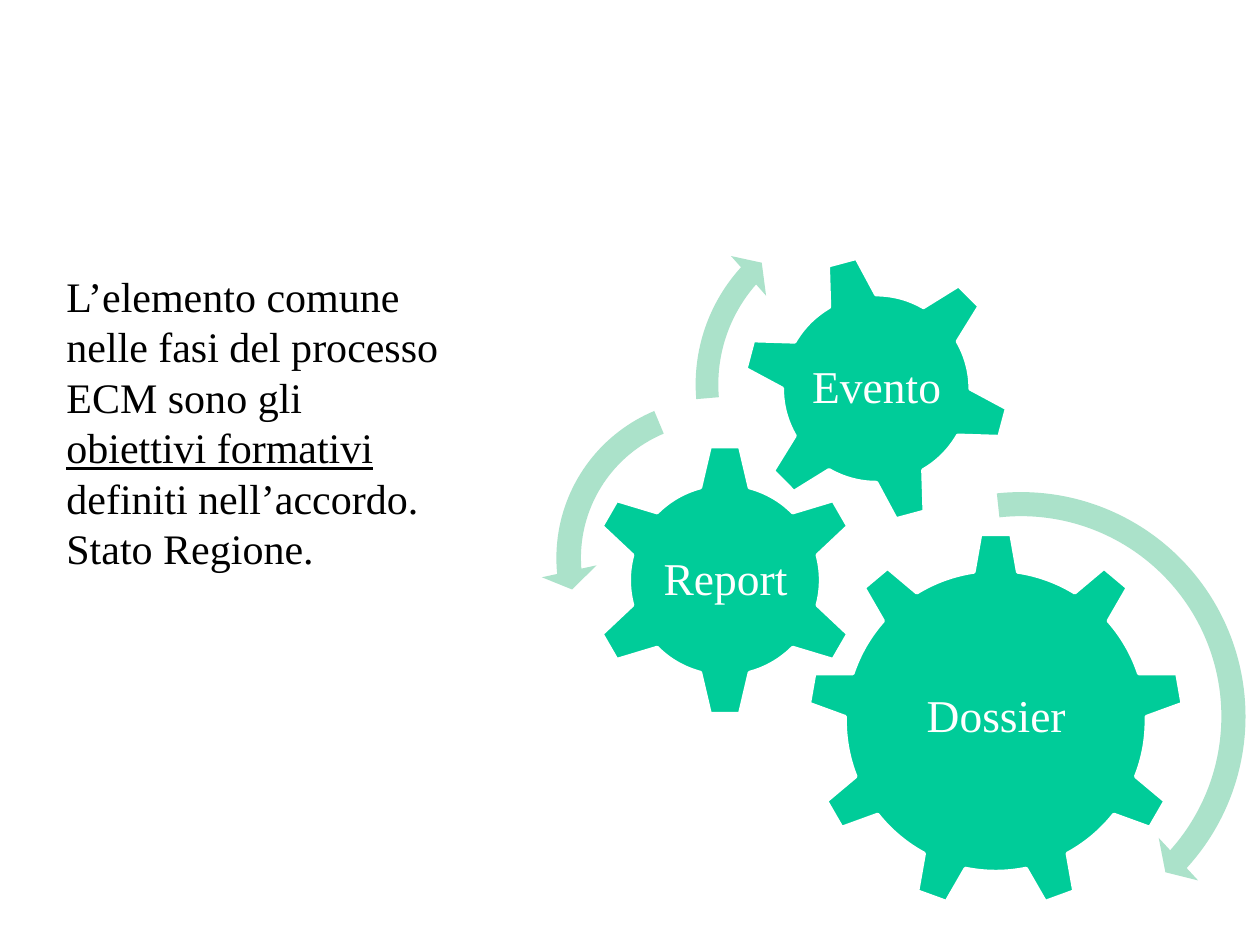
from pptx import Presentation
from pptx.dml.color import RGBColor
from pptx.enum.shapes import MSO_SHAPE as Kind
from pptx.enum.text import MSO_ANCHOR as Anchor, MSO_AUTO_SIZE as Fit, PP_ALIGN as Align
from pptx.util import Cm, Pt

FONT = "Times New Roman"
GREEN, PALE, WHITE, BLACK = "00CC99", "ABE2CA", "FFFFFF", "000000"

# name, kind, gear (left, top, side), turn, label (left, top, width, height)
GEARS = [
    ("Dossier", Kind.GEAR_9, (16.28, 10.74, 7.59), 0, (17.81, 12.52, 4.55, 3.91)),
    ("Report", Kind.GEAR_6, (11.86, 8.94, 5.51), 0, (13.26, 10.34, 2.74, 2.72)),
    ("Evento", Kind.GEAR_6, (14.96, 5.13, 5.41), 345, (16.15, 6.32, 3.05, 3.05)),
]

# kind, arrow (left, top, side), adjustments
ARROWS = [
    (Kind.CIRCULAR_ARROW, (15.72, 9.58, 9.73), (0.05, 2.99, 25.32, 158.28, 0.06)),
    (Kind.LEFT_CIRCULAR_ARROW, (10.9, 7.72, 7.06), (0.07, 4.3, 104.89, 148.38, 0.08)),
    (Kind.CIRCULAR_ARROW, (13.72, 3.94, 7.62), (0.06, 3.94, 133.14, 105.08, 0.07)),
]


def rgb(code):
    return RGBColor.from_string(code)


def style(run, size, color):
    run.font.name = FONT
    run.font.size = Pt(size)
    run.font.color.rgb = rgb(color)


def add_square(shapes, kind, place, color):
    """Add a filled preset shape as wide as it is high."""
    left, top, side = map(Cm, place)
    shape = shapes.add_shape(kind, left, top, side, side)
    shape.shadow.inherit = False
    shape.fill.solid()
    shape.fill.fore_color.rgb = rgb(color)
    return shape


def add_gear(shapes, kind, place, turn):
    gear = add_square(shapes, kind, place, GREEN)
    gear.rotation = turn
    gear.line.color.rgb = rgb(WHITE)
    gear.line.width = Pt(2)


def add_label(shapes, text, place):
    frame = shapes.add_textbox(*map(Cm, place)).text_frame
    frame.word_wrap = True
    frame.vertical_anchor = Anchor.MIDDLE
    frame.margin_left = frame.margin_right = Cm(0.1)
    frame.margin_top = frame.margin_bottom = Cm(0.1)
    frame.text = text
    para = frame.paragraphs[0]
    para.alignment = Align.CENTER
    para.line_spacing = 0.9
    style(para.runs[0], 26, WHITE)


def add_arrow(shapes, kind, place, values):
    arrow = add_square(shapes, kind, place, PALE)
    arrow.line.fill.background()
    for i, value in enumerate(values):
        arrow.adjustments[i] = value


def add_body(shapes):
    frame = shapes.add_textbox(Cm(1.09), Cm(5.33), Cm(8), Cm(6.43)).text_frame
    frame.word_wrap = True
    frame.auto_size = Fit.SHAPE_TO_FIT_TEXT
    frame.text = ("L’elemento comune nelle fasi del processo ECM sono gli \n"
                  "definiti nell’accordo. Stato Regione.")
    goal = frame.paragraphs[0].add_run()
    goal.text = "obiettivi formativi"
    goal.font.underline = True
    for para in frame.paragraphs:
        for run in para.runs:
            style(run, 24, BLACK)


def main():
    deck = Presentation()
    deck.slide_width, deck.slide_height = Cm(25.4), Cm(19.05)
    slide = deck.slides.add_slide(deck.slide_layouts[6])
    group = slide.shapes.add_group_shape().shapes
    for name, kind, place, turn, label in GEARS:
        add_gear(group, kind, place, turn)
        add_label(group, name, label)
    for arrow in ARROWS:
        add_arrow(group, *arrow)
    add_body(slide.shapes)
    deck.save("out.pptx")


if __name__ == "__main__":
    main()
